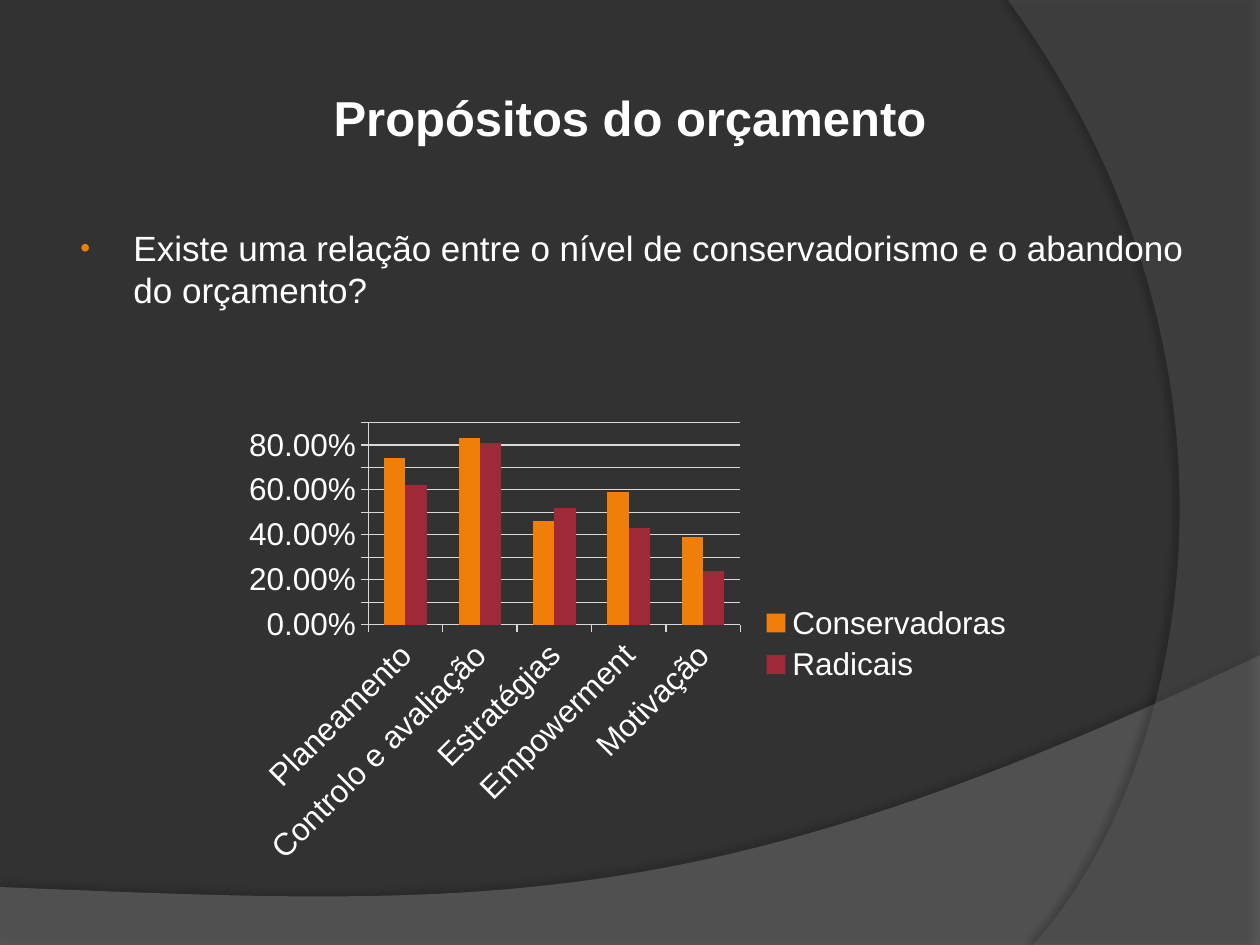
from dataclasses import dataclass

from lxml.etree import SubElement
from pptx import Presentation
from pptx.chart.data import CategoryChartData
from pptx.dml.color import RGBColor
from pptx.enum.chart import XL_CHART_TYPE, XL_LEGEND_POSITION, XL_TICK_MARK
from pptx.enum.text import MSO_ANCHOR, PP_ALIGN
from pptx.oxml.ns import qn
from pptx.util import Cm, Pt


@dataclass(frozen=True)
class Theme:
    font: str = "Arial"
    background: str = "323232"
    text: str = "FFFFFF"
    accent: str = "F07F09"
    second: str = "9F2936"
    axis: str = "D9D9D9"
    wave: str = "7F7F7F"
    arc: str = "5E5E5E"
    shadow: str = "000000"
    title_size: int = 28
    body_size: int = 20
    chart_size: int = 18


THEME = Theme()
WIDTH, HEIGHT = 25.4, 19.05


def paint(fill, color):
    fill.solid()
    fill.fore_color.rgb = RGBColor.from_string(color)


def format_font(font, size, color=THEME.text, bold=False):
    font.name = THEME.font
    font.size = Pt(size)
    font.bold = bold
    font.color.rgb = RGBColor.from_string(color)


def write(frame, text, size, align=PP_ALIGN.LEFT, anchor=MSO_ANCHOR.TOP, **style):
    frame.word_wrap = True
    frame.vertical_anchor = anchor
    paragraph = frame.paragraphs[0]
    paragraph.alignment = align
    run = paragraph.add_run()
    run.text = text
    format_font(run.font, size, **style)
    return paragraph


def add_bullet(paragraph, indent, hanging):
    properties = paragraph._p.get_or_add_pPr()
    properties.set("marL", str(Cm(indent)))
    properties.set("indent", str(-Cm(hanging)))
    color = SubElement(properties, qn("a:buClr"))
    SubElement(color, qn("a:srgbClr"), val=THEME.accent)
    SubElement(properties, qn("a:buSzPct"), val="80000")
    SubElement(properties, qn("a:buFont"), typeface=THEME.font)
    SubElement(properties, qn("a:buChar"), char="•")


def bezier(start, control1, control2, end, steps=60):
    for step in range(1, steps + 1):
        t = step / steps
        weights = ((1 - t) ** 3, 3 * t * (1 - t) ** 2, 3 * t**2 * (1 - t), t**3)
        points = (start, control1, control2, end)
        yield tuple(sum(w * p[i] for w, p in zip(weights, points)) for i in (0, 1))


def add_swoosh(slide, box, edge, curve, color, opacity, shadow_opacity, distance, direction):
    left, top, width, height = box
    outline = [
        (Cm(left + x * width), Cm(top + y * height))
        for x, y in [*edge, *bezier(*curve)]
    ]
    builder = slide.shapes.build_freeform(*outline[0])
    builder.add_line_segments(outline[1:], close=True)
    swoosh = builder.convert_to_shape()
    paint(swoosh.fill, color)
    swoosh.line.fill.background()
    swoosh.shadow.inherit = False

    properties = swoosh._element.spPr
    tint = properties.find(qn("a:solidFill")).find(qn("a:srgbClr"))
    SubElement(tint, qn("a:alpha"), val=str(opacity * 1000))
    shadow = SubElement(
        properties.find(qn("a:effectLst")), qn("a:outerShdw"),
        blurRad=str(Pt(4)), dist=str(Pt(distance)),
        dir=str(direction * 60000), algn="ctr", rotWithShape="0",
    )
    shade = SubElement(shadow, qn("a:srgbClr"), val=THEME.shadow)
    SubElement(shade, qn("a:alpha"), val=str(shadow_opacity * 1000))


def add_backdrop(slide, width, height):
    paint(slide.background.fill, THEME.background)
    add_swoosh(
        slide, (0, 13.21, width, height - 13.21),
        edge=[(0, 0.8), (0, 1), (1, 1), (1, 0)],
        curve=((1, 0), (0.56, 0.91), (0.39, 0.87), (0, 0.8)),
        color=THEME.wave, opacity=45, shadow_opacity=35, distance=3.5, direction=270,
    )
    add_swoosh(
        slide, (20.32, 0, width - 20.32, height),
        edge=[(1, 0), (1, 1), (0.1, 1)],
        curve=((0.1, 1), (0.68, 0.83), (1.09, 0.4), (0, 0)),
        color=THEME.arc, opacity=40, shadow_opacity=45, distance=4, direction=180,
    )


def add_title(slide, left, top, width, height):
    title = slide.shapes.title
    title.left, title.top, title.width, title.height = map(Cm, (left, top, width, height))
    write(title.text_frame, "Propósitos do orçamento", THEME.title_size,
          align=PP_ALIGN.CENTER, anchor=MSO_ANCHOR.MIDDLE, bold=True)


def add_question(slide, left, top, width, height):
    question = slide.shapes.add_textbox(*map(Cm, (left, top, width, height)))
    paragraph = write(
        question.text_frame,
        "Existe uma relação entre o nível de conservadorismo e o abandono do orçamento?",
        THEME.body_size,
    )
    paragraph.space_before = Pt(4)
    add_bullet(paragraph, indent=1.17, hanging=1.07)


def add_purposes_chart(slide, left, top, width, height):
    purposes = CategoryChartData(number_format="0%")
    purposes.categories = [
        "Planeamento", "Controlo e avaliação", "Estratégias", "Empowerment", "Motivação",
    ]
    purposes.add_series("Conservadoras", (0.74, 0.83, 0.46, 0.59, 0.39))
    purposes.add_series("Radicais", (0.62, 0.81, 0.52, 0.43, 0.24))
    chart = slide.shapes.add_chart(
        XL_CHART_TYPE.COLUMN_CLUSTERED, *map(Cm, (left, top, width, height)), purposes
    ).chart
    chart.has_title = False
    format_font(chart.font, THEME.chart_size)

    plot = chart.plots[0]
    plot.gap_width = 150
    plot.overlap = 0
    plot.vary_by_categories = False
    for series, color in zip(plot.series, (THEME.accent, THEME.second)):
        paint(series.format.fill, color)

    shares = chart.value_axis
    shares.minimum_scale, shares.maximum_scale, shares.major_unit = 0, 0.9, 0.1
    shares.has_major_gridlines = True
    shares.tick_labels.number_format = "0.00%"
    shares.tick_labels.number_format_is_linked = False
    for axis in (chart.category_axis, shares):
        axis.major_tick_mark = XL_TICK_MARK.OUTSIDE
        format_font(axis.tick_labels.font, THEME.chart_size)
    chart.category_axis._element.find(qn("c:txPr")).find(qn("a:bodyPr")).set("rot", "-2700000")
    for lines in (chart.category_axis, shares, shares.major_gridlines):
        paint(lines.format.line.fill, THEME.axis)
        lines.format.line.width = Pt(0.75)

    chart.has_legend = True
    chart.legend.position = XL_LEGEND_POSITION.RIGHT
    chart.legend.include_in_layout = False
    format_font(chart.legend.font, THEME.chart_size)


def main():
    deck = Presentation()
    deck.slide_width, deck.slide_height = Cm(WIDTH), Cm(HEIGHT)
    slide = deck.slides.add_slide(deck.slide_layouts[5])
    margin = 1.27
    add_backdrop(slide, WIDTH, HEIGHT)
    add_question(slide, margin, 4.45, WIDTH - 2 * margin, 12.57)
    add_title(slide, margin, 0.76, WIDTH - 2 * margin, 3.18)
    add_purposes_chart(slide, 4.7, 8.33, 16, 9.3)
    deck.save("out.pptx")


if __name__ == "__main__":
    main()
